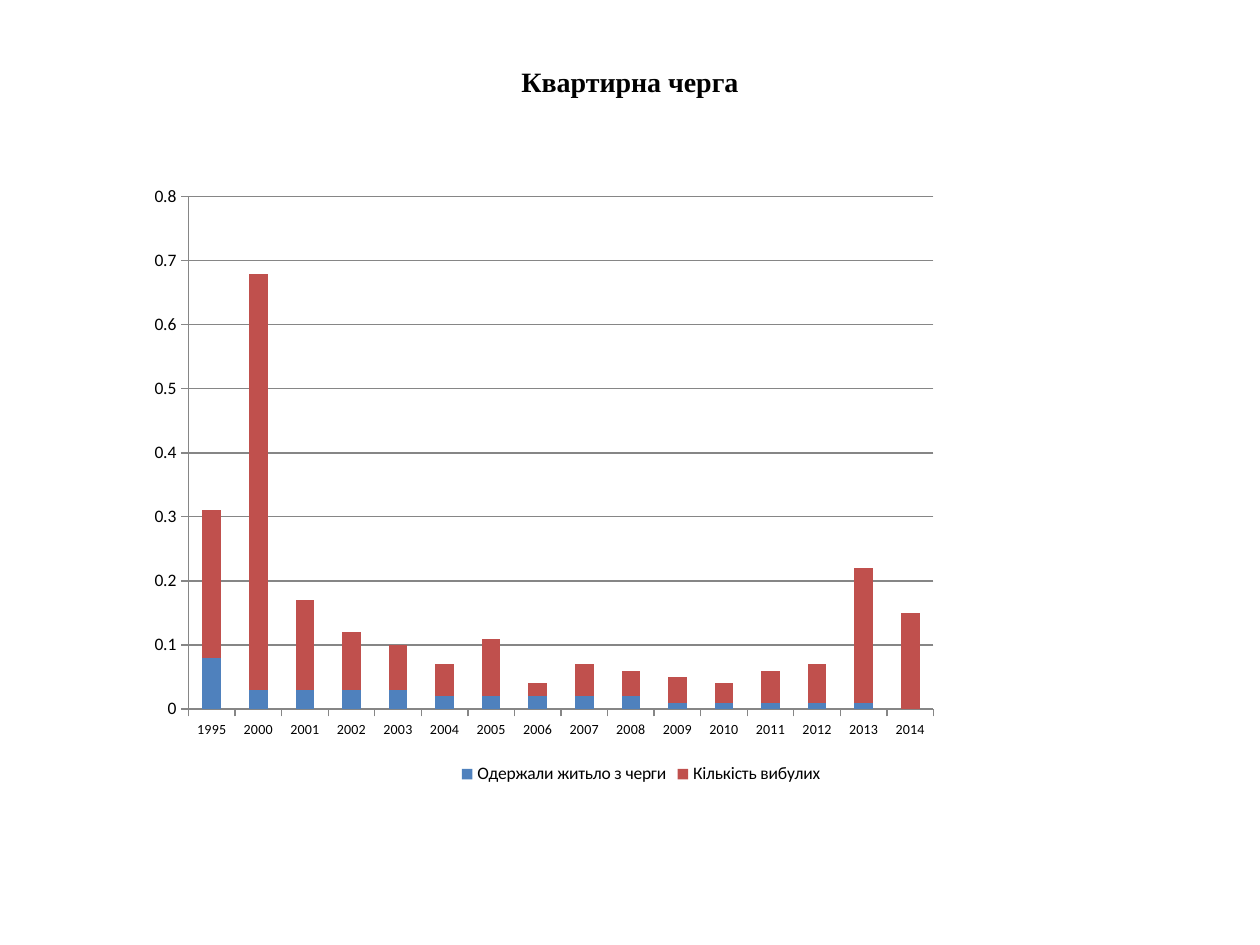
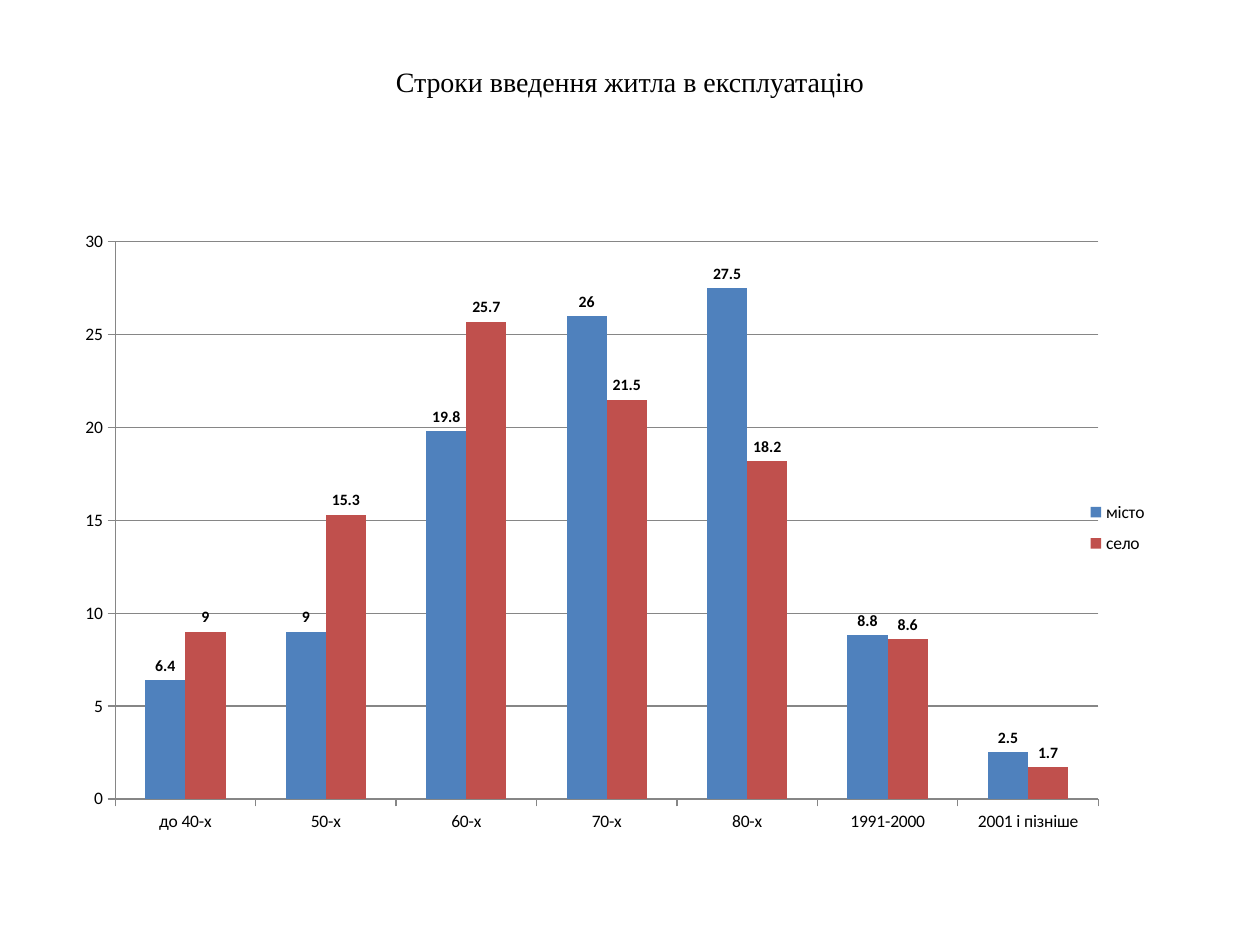
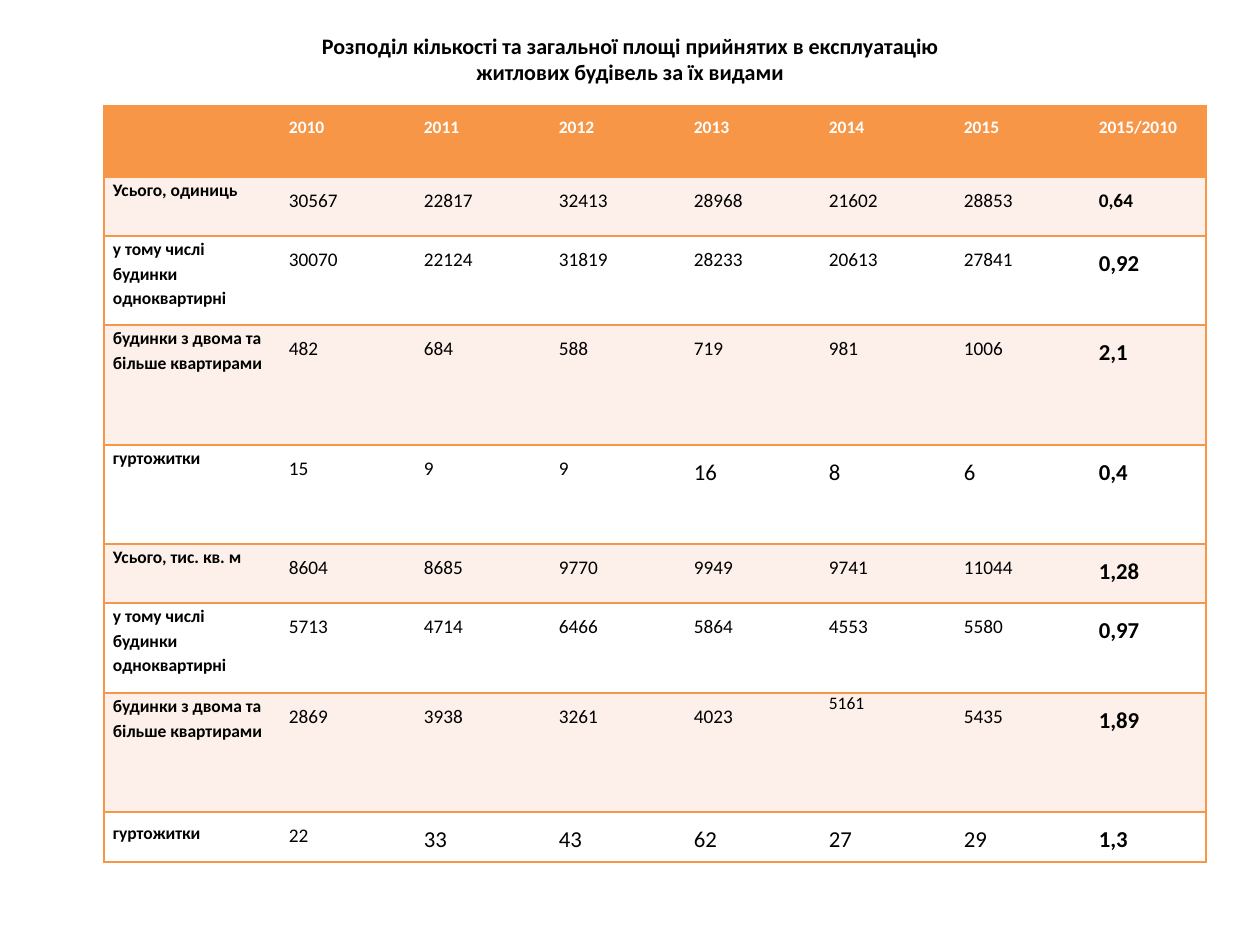
import pptx
import pptx.chart.data
import pptx.dml.color
import pptx.enum.chart
import pptx.enum.text
import pptx.oxml
import pptx.oxml.ns
import pptx.util

RGB = pptx.dml.color.RGBColor
BLACK = RGB(0x00, 0x00, 0x00)
WHITE = RGB(0xFF, 0xFF, 0xFF)
GRAY = RGB(0x86, 0x86, 0x86)
BLUE = RGB(0x4F, 0x81, 0xBD)
RED = RGB(0xC0, 0x50, 0x4D)
ORANGE = RGB(0xF7, 0x96, 0x46)
PEACH = RGB(0xFD, 0xEF, 0xE9)

BODY_FONT = "Calibri"
TITLE_FONT = "Times New Roman"
PX = 914400 // 126
SLIDE_SIZE = (1260, 945)
TITLE_BOX = (63, 38, 1134, 87)

# Content: charts
QUEUE = {
    "title": "Квартирна черга",
    "bold": True,
    "kind": pptx.enum.chart.XL_CHART_TYPE.COLUMN_STACKED,
    "box": (74, 165, 1134, 624),
    "categories": ["1995"] + [str(year) for year in range(2000, 2015)],
    "series": [
        ("Одержали житьло з черги",
         [0.08, 0.03, 0.03, 0.03, 0.03, 0.02, 0.02, 0.02,
          0.02, 0.02, 0.01, 0.01, 0.01, 0.01, 0.01, 0]),
        ("Кількість вибулих",
         [0.23, 0.65, 0.14, 0.09, 0.07, 0.05, 0.09, 0.02,
          0.05, 0.04, 0.04, 0.03, 0.05, 0.06, 0.21, 0.15]),
    ],
    "scale": (0.8, 0.1),
    "category_size": 8,
    "overlap": 100,
    "labels": False,
    "legend": pptx.enum.chart.XL_LEGEND_POSITION.BOTTOM,
    "plot_area": (115, 32, 745, 512),
    "legend_area": None,
}
TERMS = {
    "title": "Строки введення житла в експлуатацію",
    "bold": False,
    "kind": pptx.enum.chart.XL_CHART_TYPE.COLUMN_CLUSTERED,
    "box": (63, 220, 1134, 624),
    "categories": ["до 40-х", "50-х", "60-х", "70-х", "80-х",
                   "1991-2000", "2001 і пізніше"],
    "series": [
        ("місто", [6.4, 9, 19.8, 26, 27.5, 8.8, 2.5]),
        ("село", [9, 15.3, 25.7, 21.5, 18.2, 8.6, 1.7]),
    ],
    "scale": (30, 5),
    "category_size": 10,
    "overlap": 0,
    "labels": True,
    "legend": pptx.enum.chart.XL_LEGEND_POSITION.RIGHT,
    "plot_area": (52, 22, 983, 557),
    "legend_area": (1010, 271, 88, 74),
}

# Content: table
BUILDINGS_TITLE = ["Розподіл кількості та загальної площі прийнятих в експлуатацію",
                   "житлових будівель за їх видами"]
BUILDINGS_TITLE_BOX = (63, 26, 1134, 90)
TABLE_CORNER = (104, 106)
COLUMN_WIDTHS = [176] + [135] * 6 + [116]
HEADER_HEIGHT = 71
HEADER = ["", "2010", "2011", "2012", "2013", "2014", "2015", "2015/2010"]
SINGLE = ["у тому числі", "будинки одноквартирні"]
MULTIPLE = ["будинки з двома та", "більше квартирами"]
# Row height, label paragraphs, yearly values, ratio
ROWS = [
    (59, ["Усього, одиниць"], "30567 22817 32413 28968 21602 28853", "0,64"),
    (89, SINGLE, "30070 22124 31819 28233 20613 27841", "0,92"),
    (120, MULTIPLE, "482 684 588 719 981 1006", "2,1"),
    (99, ["гуртожитки"], "15 9 9 16 8 6", "0,4"),
    (59, ["Усього, тис. кв. м"], "8604 8685 9770 9949 9741 11044", "1,28"),
    (90, [" ".join(SINGLE)], "5713 4714 6466 5864 4553 5580", "0,97"),
    (119, MULTIPLE, "2869 3938 3261 4023 5161 5435", "1,89"),
    (50, ["гуртожитки"], "22 33 43 62 27 29", "1,3"),
]
# Cells (row, column) that differ from the usual text
LARGE_CELLS = {(4, 4), (4, 5), (4, 6)} | {(8, column) for column in range(2, 7)}
SMALL_RATIO = (1, 7)
COMPACT_CELL = (7, 5)
WIDE_LABEL = (8, 0)


def scaled(lengths):
    return [length * PX for length in lengths]


def style_font(font, size, color=BLACK, bold=False, name=BODY_FONT):
    font.name = name
    font.size = pptx.util.Pt(size)
    font.bold = bold
    font.color.rgb = color


def add_title(slide, lines, box, size, bold, name, anchor):
    frame = slide.shapes.add_textbox(*scaled(box)).text_frame
    frame.word_wrap = True
    frame.vertical_anchor = anchor
    paragraph = frame.paragraphs[0]
    paragraph.alignment = pptx.enum.text.PP_ALIGN.CENTER
    for index, line in enumerate(lines):
        if index:
            paragraph.add_line_break()
        run = paragraph.add_run()
        run.text = line
        style_font(run.font, size, bold=bold, name=name)


def set_layout(parent, position, area, box, inner=False):
    """Place a chart part by hand, as fractions of the chart box."""
    for layout in parent.findall(pptx.oxml.ns.qn("c:layout")):
        parent.remove(layout)
    target = '<c:layoutTarget val="inner"/>' if inner else ""
    modes = "".join(f'<c:{axis}Mode val="edge"/>' for axis in "xy")
    sizes = "".join(f'<c:{key} val="{length / box[2 + index % 2]:.3f}"/>'
                    for index, (key, length) in enumerate(zip("xywh", area)))
    parent.insert(position, pptx.oxml.parse_xml(
        f'<c:layout {pptx.oxml.ns.nsdecls("c")}><c:manualLayout>'
        f'{target}{modes}{sizes}</c:manualLayout></c:layout>'))


def style_line(line):
    line.color.rgb = GRAY
    line.width = pptx.util.Pt(0.75)


def add_chart_slide(presentation, content):
    slide = presentation.slides.add_slide(presentation.slide_layouts[6])
    add_title(slide, [content["title"]], TITLE_BOX, 16, content["bold"], TITLE_FONT,
              pptx.enum.text.MSO_ANCHOR.MIDDLE)

    data = pptx.chart.data.CategoryChartData()
    data.categories = content["categories"]
    for name, values in content["series"]:
        data.add_series(name, values)
    box = content["box"]
    chart = slide.shapes.add_chart(content["kind"], *scaled(box), data).chart
    chart.has_title = False
    style_font(chart.font, 10)

    # Columns
    plot = chart.plots[0]
    plot.gap_width = 150
    plot.overlap = content["overlap"]
    plot.vary_by_categories = False
    for series, color in zip(plot.series, (BLUE, RED)):
        series.format.fill.solid()
        series.format.fill.fore_color.rgb = color
        if content["labels"]:
            labels = series.data_labels
            labels.show_value = True
            labels.position = pptx.enum.chart.XL_LABEL_POSITION.OUTSIDE_END
            style_font(labels.font, 9, bold=True)

    # Axes
    for axis in (chart.category_axis, chart.value_axis):
        axis.major_tick_mark = pptx.enum.chart.XL_TICK_MARK.OUTSIDE
        style_line(axis.format.line)
    style_font(chart.category_axis.tick_labels.font, content["category_size"])
    value_axis = chart.value_axis
    value_axis.minimum_scale = 0
    value_axis.maximum_scale, value_axis.major_unit = content["scale"]
    value_axis.has_major_gridlines = True
    style_line(value_axis.major_gridlines.format.line)

    # Legend and plot area
    chart.has_legend = True
    chart.legend.position = content["legend"]
    chart.legend.include_in_layout = False
    style_font(chart.legend.font, 10)
    plot_area = chart.element.find(".//" + pptx.oxml.ns.qn("c:plotArea")) \
        if hasattr(chart, "element") else chart._chartSpace.chart.plotArea
    set_layout(plot_area, 0, content["plot_area"], box, inner=True)
    if content["legend_area"]:
        legend = plot_area.getparent().find(pptx.oxml.ns.qn("c:legend"))
        set_layout(legend, 1, content["legend_area"], box)


def fill_cell(cell, place, paragraphs, size, color, bold, spacing):
    row, column = place
    cell.margin_left = cell.margin_right = 9 * PX
    cell.margin_top = cell.margin_bottom = 0

    # Borders: rules between rows and an outer frame
    sides = ["L"] * (column == 0) + ["R"] * (column == len(HEADER) - 1) + ["T", "B"]
    properties = cell._tc.get_or_add_tcPr()
    for side in sides:
        properties.append(pptx.oxml.parse_xml(
            f'<a:ln{side} {pptx.oxml.ns.nsdecls("a")} w="12700"><a:solidFill>'
            f'<a:srgbClr val="{ORANGE}"/></a:solidFill></a:ln{side}>'))
    cell.fill.solid()
    cell.fill.fore_color.rgb = ORANGE if row == 0 else PEACH if row % 2 else WHITE

    frame = cell.text_frame
    for index, text in enumerate(paragraphs):
        paragraph = frame.add_paragraph() if index else frame.paragraphs[0]
        paragraph.line_spacing = spacing
        last = index == len(paragraphs) - 1
        if last and " ".join(SINGLE) != text:
            paragraph.alignment = pptx.enum.text.PP_ALIGN.JUSTIFY
        if text:
            run = paragraph.add_run()
            run.text = text
            style_font(run.font, size, color, bold)


def cell_style(place):
    """Return size, colour, bold and line spacing for a cell."""
    row, column = place
    if row == 0:
        return 10, WHITE, True, 1.5
    if column == 0:
        return 10, BLACK, True, 1.5 if place == WIDE_LABEL else 1.15
    if column == len(HEADER) - 1:
        return 11 if place == SMALL_RATIO else 13, BLACK, True, 1.5
    if place == COMPACT_CELL:
        return 10, BLACK, False, 1.0
    return 13 if place in LARGE_CELLS else 11, BLACK, False, 1.5


def add_table_slide(presentation):
    slide = presentation.slides.add_slide(presentation.slide_layouts[6])
    add_title(slide, BUILDINGS_TITLE, BUILDINGS_TITLE_BOX, 12.6, True, BODY_FONT,
              pptx.enum.text.MSO_ANCHOR.TOP)

    heights = [HEADER_HEIGHT] + [row[0] for row in ROWS]
    grid = [[[text] for text in HEADER]]
    for _, label, values, ratio in ROWS:
        grid.append([label] + [[value] for value in values.split()] + [[ratio]])

    table = slide.shapes.add_table(
        len(grid), len(HEADER),
        *scaled((*TABLE_CORNER, sum(COLUMN_WIDTHS), sum(heights)))).table
    table.first_row = table.horz_banding = False
    # Plain table style without a grid
    style = table._tbl.tblPr.find(pptx.oxml.ns.qn("a:tableStyleId"))
    style.text = "{2D5ABB26-0587-4C30-8999-92F81FD0307C}"
    for column, width in zip(table.columns, COLUMN_WIDTHS):
        column.width = width * PX
    for row, height in zip(table.rows, heights):
        row.height = height * PX
    for row, cells in enumerate(grid):
        for column, paragraphs in enumerate(cells):
            place = (row, column)
            fill_cell(table.cell(row, column), place, paragraphs, *cell_style(place))


def main():
    presentation = pptx.Presentation()
    presentation.slide_width, presentation.slide_height = scaled(SLIDE_SIZE)
    for content in (QUEUE, TERMS):
        add_chart_slide(presentation, content)
    add_table_slide(presentation)
    presentation.save("out.pptx")


if __name__ == "__main__":
    main()
